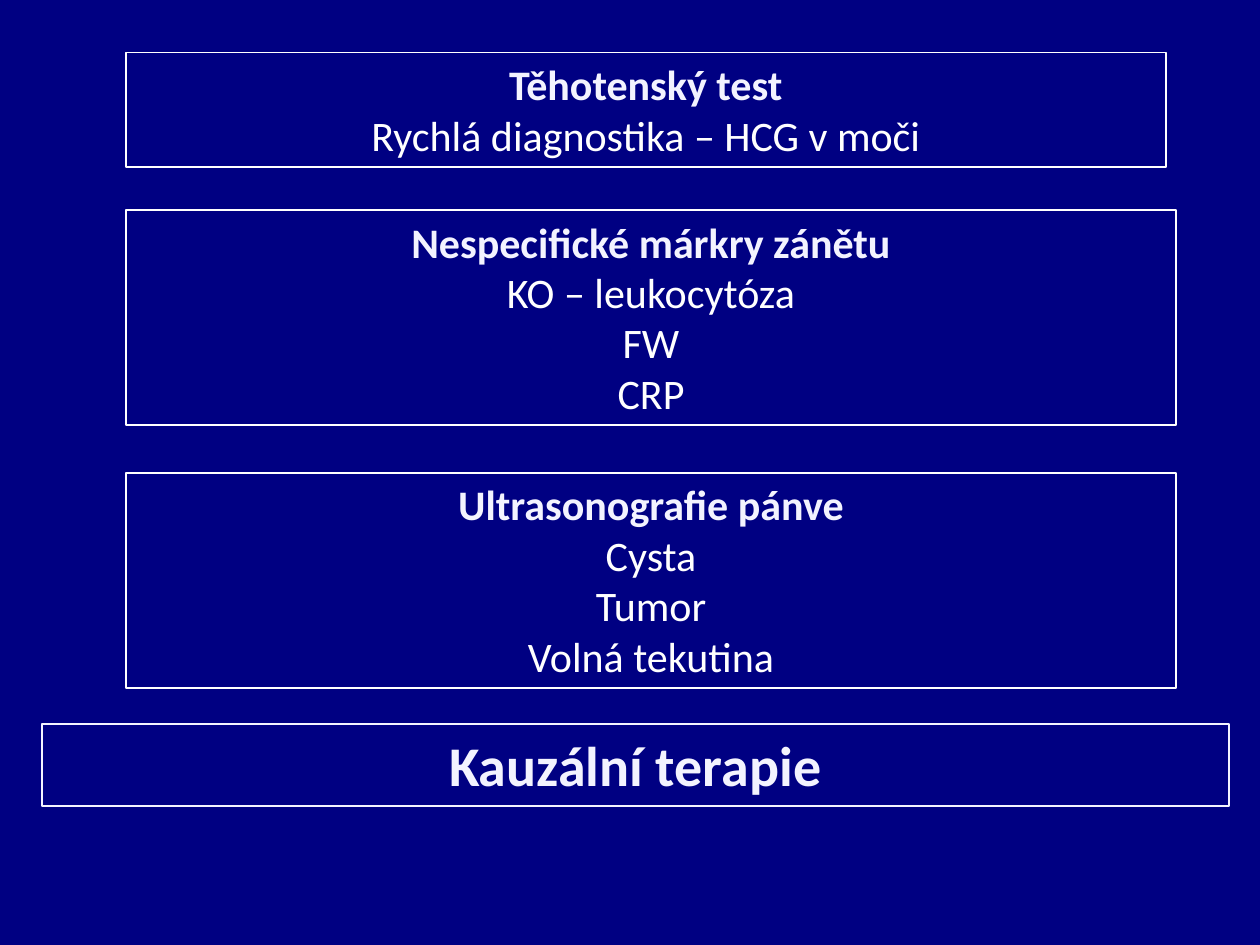
from pptx import Presentation
from pptx.dml.color import RGBColor
from pptx.enum.text import MSO_AUTO_SIZE, PP_ALIGN
from pptx.util import Cm, Pt

NAVY = RGBColor(0x00, 0x00, 0x82)
WHITE = RGBColor(0xFF, 0xFF, 0xFF)
PALE = RGBColor(0xF3, 0xF3, 0xFF)

# left, top, width, height in cm; line colour; heading size; heading and items
BOXES = [
    (2.54, 1.06, 20.96, 2.31, WHITE, 24,
     ["Těhotenský test", "Rychlá diagnostika – HCG v moči"]),
    (2.54, 4.23, 21.17, 4.34, WHITE, 24,
     ["Nespecifické márkry zánětu", "KO – leukocytóza", "FW", "CRP"]),
    (2.54, 9.53, 21.17, 4.34, WHITE, 24,
     ["Ultrasonografie pánve", "Cysta", "Tumor", "Volná tekutina"]),
    (0.85, 14.6, 23.92, 1.65, PALE, 32, ["Kauzální terapie"]),
]

deck = Presentation()
deck.slide_width, deck.slide_height = Cm(25.4), Cm(19.05)
page = deck.slides.add_slide(deck.slide_layouts[6])
page.background.fill.solid()
page.background.fill.fore_color.rgb = NAVY

for left, top, width, height, line_color, size, texts in BOXES:
    box = page.shapes.add_textbox(Cm(left), Cm(top), Cm(width), Cm(height))
    box.line.color.rgb = line_color
    box.line.width = Pt(1)
    frame = box.text_frame
    frame.word_wrap = True
    frame.auto_size = MSO_AUTO_SIZE.SHAPE_TO_FIT_TEXT
    frame.text = "\n".join(texts)
    for index, para in enumerate(frame.paragraphs):
        is_heading = index == 0
        para.alignment = PP_ALIGN.CENTER
        para.font.name = "Calibri"
        para.font.size = Pt(size)
        para.font.bold = is_heading
        para.font.color.rgb = PALE if is_heading else WHITE

deck.save("out.pptx")
